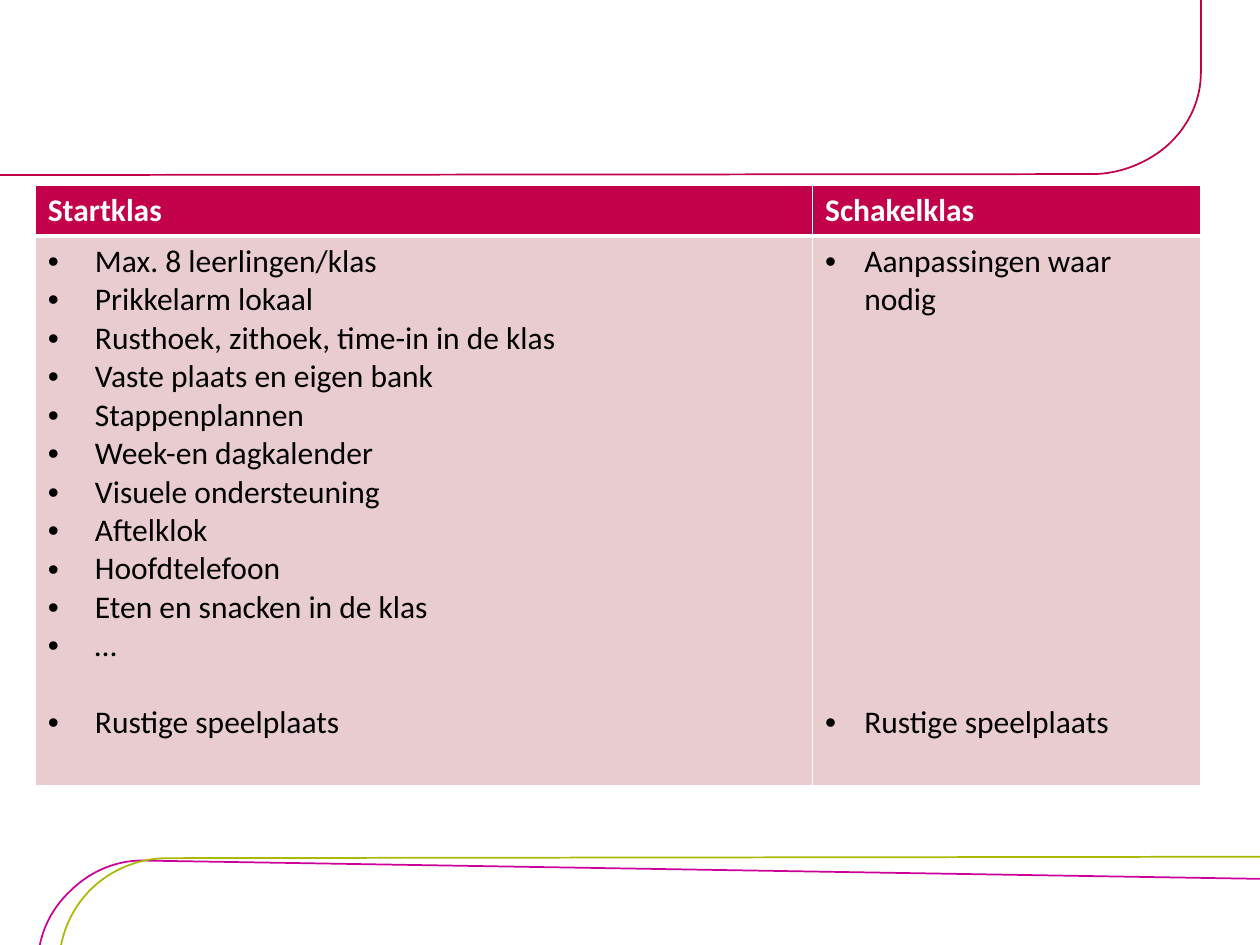
import lxml.etree
import pptx
import pptx.dml.color
import pptx.oxml.ns
import pptx.util

Cm = pptx.util.Cm
Pt = pptx.util.Pt
qn = pptx.oxml.ns.qn

COLORS = {
    "crimson": "C3004A",
    "magenta": "CC0099",
    "green": "A9B905",
    "rose": "E9CCD0",
    "white": "FFFFFF",
    "black": "000000",
}
FONT = "Calibri"
LINE_HEIGHT = 21.95

SWOOSHES = [
    ("magenta", [(0.71, 22.63), (0.76, 19.48), (0.76, 18.9), (0.99, 18.36), (1.42, 17.96),
                 (1.83, 17.55), (2.39, 17.32), (2.97, 17.35), (26.16, 17.73)]),
    ("green", [(1.19, 22.63), (1.19, 19.48), (1.19, 18.9), (1.42, 18.34), (1.83, 17.93),
               (2.24, 17.53), (2.79, 17.3), (3.38, 17.3), (26.57, 17.27)]),
    ("crimson", [(24.21, -1.47), (24.21, 1.45), (24.21, 2.01), (23.98, 2.51), (23.57, 2.9),
                 (23.16, 3.28), (22.58, 3.51), (22.02, 3.51), (-1.17, 3.53)]),
]

START_ITEMS = [
    "Max. 8 leerlingen/klas",
    "Prikkelarm lokaal",
    "Rusthoek, zithoek, time-in in de klas",
    "Vaste plaats en eigen bank",
    "Stappenplannen",
    "Week-en dagkalender",
    "Visuele ondersteuning",
    "Aftelklok",
    "Hoofdtelefoon",
    "Eten en snacken in de klas",
    "…",
    "Rustige speelplaats",
]
SWITCH_ITEMS = ["Aanpassingen waar nodig", "Rustige speelplaats"]


def rgb(name):
    return pptx.dml.color.RGBColor.from_string(COLORS[name])


def add_swoosh(page, color, points):
    corners = [(Cm(x), Cm(y)) for x, y in points]
    builder = page.shapes.build_freeform(*corners[0])
    builder.add_line_segments(corners[1:], close=False)
    shape = builder.convert_to_shape()
    segments = list(shape._element.iter(qn("a:lnTo")))
    for first in (1, 4):
        curve = lxml.etree.Element(qn("a:cubicBezTo"))
        segments[first].addprevious(curve)
        for segment in segments[first:first + 3]:
            curve.append(segment[0])
            segment.getparent().remove(segment)
    shape.fill.background()
    shape.line.color.rgb = rgb(color)
    shape.line.width = Pt(1)
    shape.shadow.inherit = False


def style_cell(cell, fill, top, bottom):
    cell.fill.solid()
    cell.fill.fore_color.rgb = rgb(fill)
    properties = cell._tc.get_or_add_tcPr()
    widths = {"a:lnL": 1, "a:lnR": 1, "a:lnT": top, "a:lnB": bottom}
    for position, (tag, width) in enumerate(widths.items()):
        border = lxml.etree.Element(qn(tag), w=str(Pt(width)))
        solid = lxml.etree.SubElement(border, qn("a:solidFill"))
        lxml.etree.SubElement(solid, qn("a:srgbClr"), val=COLORS["white"])
        properties.insert(position, border)


def set_font(para, color, bold):
    para.font.name = FONT
    para.font.size = Pt(18)
    para.font.bold = bold
    para.font.color.rgb = rgb(color)


def add_bullet(para, indent):
    properties = para._p.get_or_add_pPr()
    properties.set("marL", str(Cm(indent)))
    properties.set("indent", str(-Cm(indent)))
    lxml.etree.SubElement(properties, qn("a:buFont"), typeface="Arial")
    lxml.etree.SubElement(properties, qn("a:buChar"), char="•")


def fill_list(cell, items, indent, gap_lines):
    frame = cell.text_frame
    for index, item in enumerate(items):
        para = frame.paragraphs[0] if index == 0 else frame.add_paragraph()
        para.text = item
        add_bullet(para, indent)
        set_font(para, "black", False)
    para.space_before = Pt(round(gap_lines * LINE_HEIGHT, 1))


def add_class_table(page):
    table = page.shapes.add_table(2, 2, Cm(0.71), Cm(3.73), Cm(23.49), Cm(12.11)).table
    table.horz_banding = False
    for column, width in zip(table.columns, (15.67, 7.82)):
        column.width = Cm(width)
    for row, height in zip(table.rows, (1.03, 11.08)):
        row.height = Cm(height)
    columns = [("Startklas", START_ITEMS, 0.95, 1), ("Schakelklas", SWITCH_ITEMS, 0.79, 10)]
    for index, (title, items, indent, gap_lines) in enumerate(columns):
        header, body = table.cell(0, index), table.cell(1, index)
        style_cell(header, "crimson", 1, 3)
        header.text = title
        set_font(header.text_frame.paragraphs[0], "white", True)
        style_cell(body, "rose", 3, 1)
        fill_list(body, items, indent, gap_lines)


def main():
    deck = pptx.Presentation()
    deck.slide_width = Cm(25.4)
    deck.slide_height = Cm(19.05)
    page = deck.slides.add_slide(deck.slide_layouts[6])
    for color, points in SWOOSHES:
        add_swoosh(page, color, points)
    add_class_table(page)
    deck.save("out.pptx")


if __name__ == "__main__":
    main()
